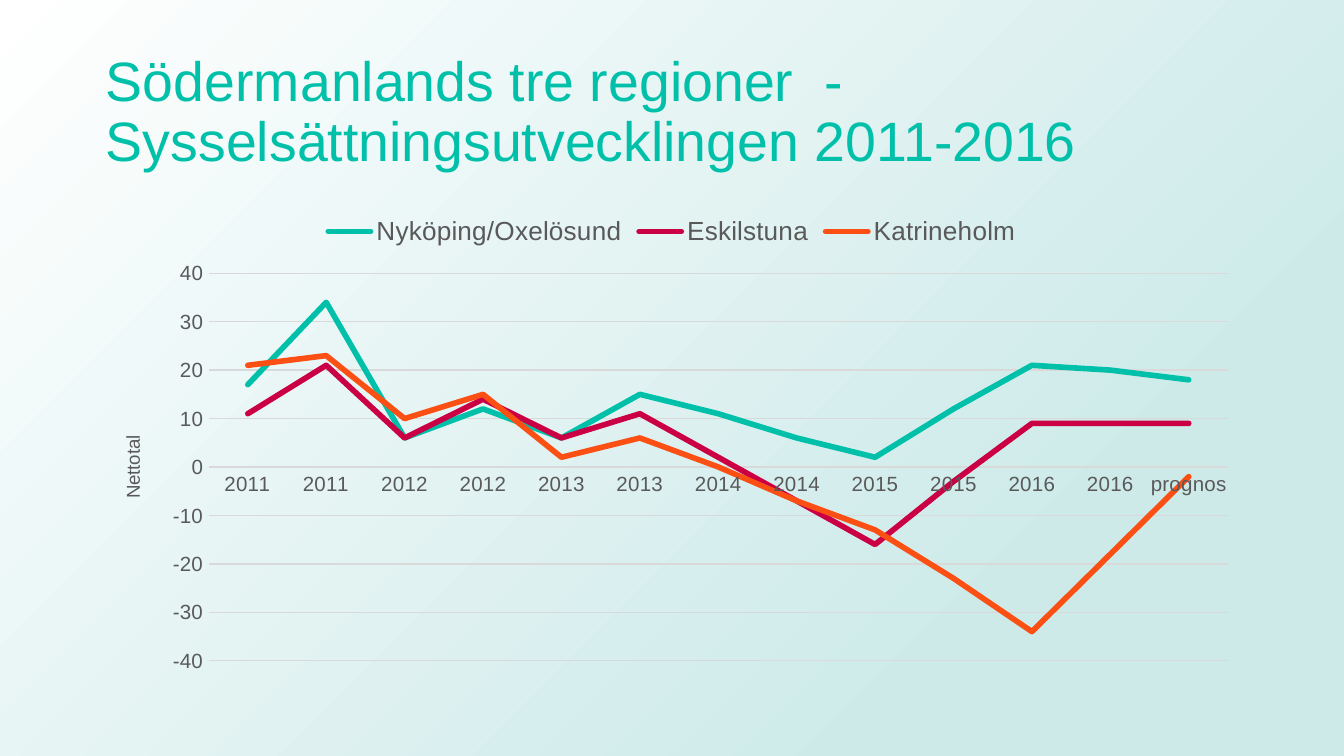
import pptx
import pptx.chart.data
import pptx.dml.color
import pptx.enum.chart
import pptx.enum.shapes
import pptx.enum.text
import pptx.oxml
import pptx.oxml.ns
import pptx.util

RGBColor = pptx.dml.color.RGBColor
Inches, Pt = pptx.util.Inches, pptx.util.Pt

TEAL = RGBColor(0x00, 0xC0, 0xA9)
CRIMSON = RGBColor(0xCB, 0x00, 0x44)
ORANGE = RGBColor(0xFB, 0x4F, 0x14)
GREY = RGBColor(0x59, 0x59, 0x59)
GRID_GREY = RGBColor(0xD9, 0xD9, 0xD9)
MIST = RGBColor(0xCD, 0xEA, 0xE9)
WHITE = RGBColor(0xFF, 0xFF, 0xFF)

HEADING = "Södermanlands tre regioner  - Sysselsättningsutvecklingen 2011-2016"
PERIODS = [str(year) for year in range(2011, 2017) for half in range(2)] + ["prognos"]
REGIONS = [
    ("Nyköping/Oxelösund", TEAL, (17, 34, 6, 12, 6, 15, 11, 6, 2, 12, 21, 20, 18)),
    ("Eskilstuna", CRIMSON, (11, 21, 6, 14, 6, 11, 2, -7, -16, -3, 9, 9, 9)),
    ("Katrineholm", ORANGE, (21, 23, 10, 15, 2, 6, 0, -7, -13, -23, -34, -18, -2)),
]
PLOT_SHARES = {"x": 0.1, "y": 0.15, "w": 0.88, "h": 0.81}
WIDTH = Inches(10)
HEIGHT = WIDTH * 9 // 16
MARGIN = Inches(0.69)
CONTENT_WIDTH = WIDTH - 2 * MARGIN


def set_font(font, size, color):
    font.name = "Arial"
    font.size = Pt(size)
    font.bold = False
    font.color.rgb = color


def add_backdrop(slide):
    backdrop = slide.shapes.add_shape(
        pptx.enum.shapes.MSO_SHAPE.RECTANGLE, 0, 0, WIDTH, HEIGHT)
    backdrop.shadow.inherit = False
    backdrop.line.fill.background()
    backdrop.fill.gradient()
    stops = backdrop.fill.gradient_stops
    for stop, position, color in zip(stops, (0.23, 1), (MIST, WHITE)):
        stop.position = position
        stop.color.rgb = color
    gradient = backdrop.element.spPr.find(pptx.oxml.ns.qn("a:gradFill"))
    gradient.replace(
        gradient.find(pptx.oxml.ns.qn("a:lin")),
        pptx.oxml.parse_xml(
            f'<a:path {pptx.oxml.ns.nsdecls("a")} path="circle">'
            '<a:fillToRect l="100000" t="100000"/></a:path>'))


def add_heading(slide):
    frame = slide.shapes.add_textbox(
        MARGIN, Inches(0.3), CONTENT_WIDTH, Inches(1.09)).text_frame
    frame.word_wrap = True
    frame.vertical_anchor = pptx.enum.text.MSO_ANCHOR.MIDDLE
    heading = frame.paragraphs[0]
    heading.text = HEADING
    heading.line_spacing = 0.9
    set_font(heading.font, 29.7, TEAL)


def add_employment_chart(slide):
    employment = pptx.chart.data.CategoryChartData()
    employment.categories = PERIODS
    for region, color, values in REGIONS:
        employment.add_series(region, values)
    chart = slide.shapes.add_chart(
        pptx.enum.chart.XL_CHART_TYPE.LINE, MARGIN, Inches(1.5),
        CONTENT_WIDTH, Inches(3.56), employment).chart
    chart.has_title = False
    set_font(chart.font, 11, GREY)

    chart.has_legend = True
    chart.legend.position = pptx.enum.chart.XL_LEGEND_POSITION.TOP
    chart.legend.include_in_layout = False
    set_font(chart.legend.font, 14, GREY)

    plot = chart.plots[0]
    plot.vary_by_categories = False
    for series, (region, color, values) in zip(plot.series, REGIONS):
        series.smooth = False
        series.marker.style = pptx.enum.chart.XL_MARKER_STYLE.NONE
        series.format.line.width = Pt(3)
        series.format.line.color.rgb = color
        series.format.line._ln.set("cap", "rnd")

    periods, net_total = chart.category_axis, chart.value_axis
    for axis in (periods, net_total):
        axis.major_tick_mark = pptx.enum.chart.XL_TICK_MARK.NONE
        axis.minor_tick_mark = pptx.enum.chart.XL_TICK_MARK.NONE
        set_font(axis.tick_labels.font, 11, GREY)
    net_total.minimum_scale, net_total.maximum_scale = -40, 40
    net_total.major_unit = 10
    net_total.format.line.fill.background()
    for line in (periods.format.line, net_total.major_gridlines.format.line):
        line.color.rgb = GRID_GREY
        line.width = Pt(0.75)

    label = net_total.axis_title.text_frame
    label.text = "Nettotal"
    set_font(label.paragraphs[0].font, 10, GREY)
    label._txBody.bodyPr.set("rot", "-5400000")
    label._txBody.bodyPr.set("vert", "horz")

    shares = "".join(f'<c:{side} val="{share}"/>' for side, share in PLOT_SHARES.items())
    layout = pptx.oxml.parse_xml(
        f'<c:layout {pptx.oxml.ns.nsdecls("c")}><c:manualLayout>'
        '<c:layoutTarget val="inner"/><c:xMode val="edge"/><c:yMode val="edge"/>'
        f'{shares}</c:manualLayout></c:layout>')
    plot_area = chart._chartSpace.chart.plotArea
    for automatic in plot_area.findall(pptx.oxml.ns.qn("c:layout")):
        plot_area.remove(automatic)
    plot_area.insert(0, layout)


def main():
    deck = pptx.Presentation()
    deck.slide_width, deck.slide_height = WIDTH, HEIGHT
    slide = deck.slides.add_slide(deck.slide_layouts[6])
    add_backdrop(slide)
    add_heading(slide)
    add_employment_chart(slide)
    deck.save("out.pptx")


if __name__ == "__main__":
    main()
